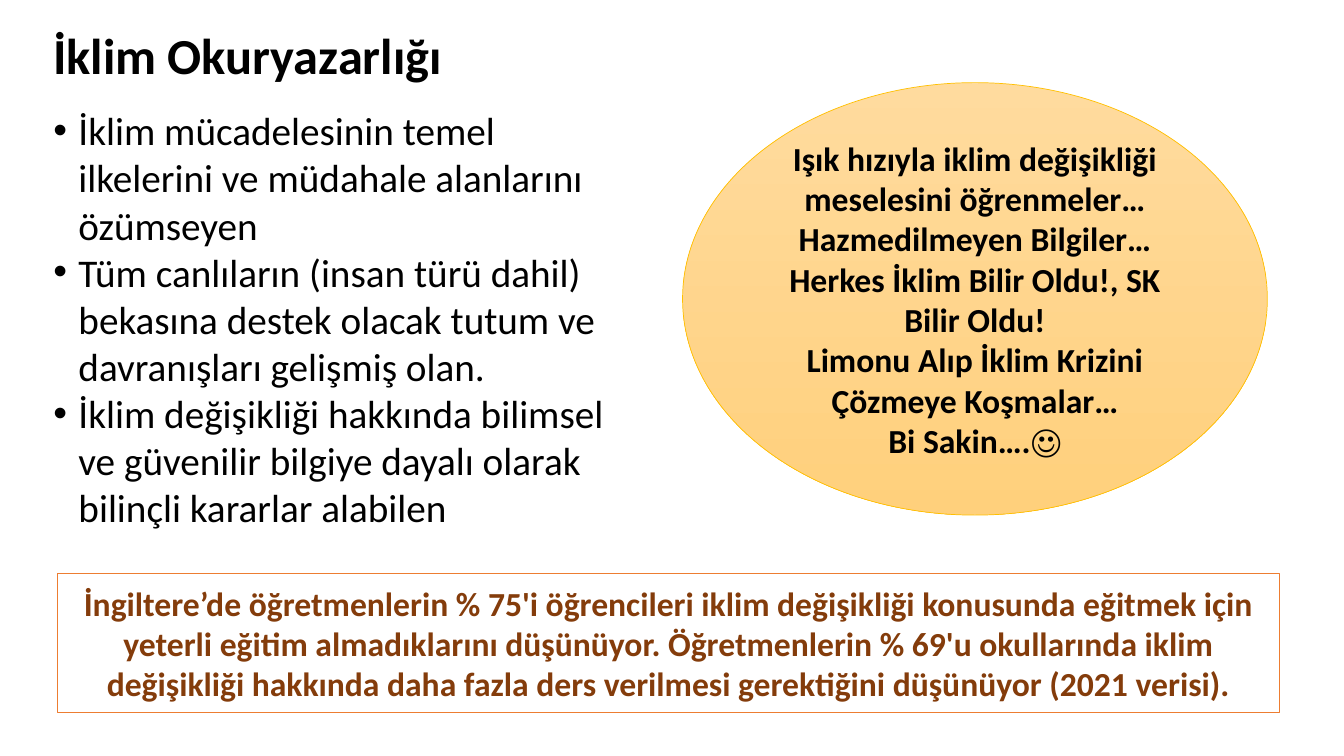
from lxml import etree
from pptx import Presentation
from pptx.dml.color import RGBColor
from pptx.enum import shapes, text
from pptx.oxml import ns
from pptx.util import Inches, Pt

BLACK = RGBColor(0x00, 0x00, 0x00)
WHITE = RGBColor(0xFF, 0xFF, 0xFF)
BROWN = RGBColor(0x84, 0x3C, 0x0B)
ORANGE = RGBColor(0xED, 0x7D, 0x31)
GOLD = RGBColor(0xFF, 0xC0, 0x00)
SAND_LIGHT = RGBColor(0xFF, 0xDB, 0x9E)
SAND_DARK = RGBColor(0xFF, 0xD0, 0x7C)

TITLE = "İklim Okuryazarlığı"
TRAITS = [
    "İklim mücadelesinin temel ilkelerini ve müdahale alanlarını özümseyen",
    "Tüm canlıların (insan türü dahil) bekasına destek olacak tutum ve davranışları gelişmiş olan.",
    "İklim değişikliği hakkında bilimsel ve güvenilir bilgiye dayalı olarak bilinçli kararlar alabilen",
]
REMARKS = "\n".join([
    "Işık hızıyla iklim değişikliği meselesini öğrenmeler…",
    "Hazmedilmeyen Bilgiler…",
    "Herkes İklim Bilir Oldu!, SK Bilir Oldu!",
    "Limonu Alıp İklim Krizini Çözmeye Koşmalar…",
    "Bi Sakin….☺",
])
SURVEY = (
    "İngiltere’de öğretmenlerin % 75'i öğrencileri iklim değişikliği konusunda "
    "eğitmek için yeterli eğitim almadıklarını düşünüyor. Öğretmenlerin % 69'u "
    "okullarında iklim değişikliği hakkında daha fazla ders verilmesi gerektiğini "
    "düşünüyor (2021 verisi)."
)


def write(shape, paragraphs, size, color=BLACK, bold=False,
          align=text.PP_ALIGN.LEFT, anchor=text.MSO_ANCHOR.MIDDLE):
    frame = shape.text_frame
    frame.word_wrap = True
    frame.vertical_anchor = anchor
    for index, words in enumerate(paragraphs):
        para = frame.add_paragraph() if index else frame.paragraphs[0]
        para.text = words
        para.alignment = align
        for span in para.runs:
            for name, value in {"name": "Calibri", "size": Pt(size), "bold": bold}.items():
                setattr(span.font, name, value)
            span.font.color.rgb = color


def add_text(page, bounds, paragraphs, size, **style):
    box = page.shapes.add_textbox(*map(Inches, bounds))
    write(box, paragraphs, size, **style)
    return box


def add_bullets(box, indent):
    for para in box.text_frame.paragraphs:
        properties = para._p.get_or_add_pPr()
        properties.set("marL", str(Inches(indent)))
        properties.set("indent", str(-Inches(indent)))
        font = etree.SubElement(properties, ns.qn("a:buFont"))
        font.set("typeface", "Arial")
        bullet = etree.SubElement(properties, ns.qn("a:buChar"))
        bullet.set("char", "•")


def add_callout(page, kind, bounds, words, line, width, color):
    callout = page.shapes.add_shape(kind, *map(Inches, bounds))
    callout.shadow.inherit = False
    callout.line.color.rgb = line
    callout.line.width = Pt(width)
    write(callout, [words], 24, color=color, bold=True, align=text.PP_ALIGN.CENTER)
    return callout


def main():
    deck = Presentation()
    deck.slide_width, deck.slide_height = Inches(13.33), Inches(7.5)
    page = deck.slides.add_slide(deck.slide_layouts[6])

    add_text(page, (0.43, 0.19, 12.68, 0.7), [TITLE], 36, bold=True)
    traits = add_text(page, (0.43, 1.01, 5.89, 4.5), TRAITS, 28,
                      anchor=text.MSO_ANCHOR.TOP)
    add_bullets(traits, 0.25)

    remarks = add_callout(page, shapes.MSO_SHAPE.OVAL, (6.77, 0.82, 5.8, 4.29),
                          REMARKS, GOLD, 0.5, BLACK)
    remarks.fill.gradient()
    remarks.fill.gradient_angle = 270
    for stop, color in zip(remarks.fill.gradient_stops, (SAND_LIGHT, SAND_DARK)):
        stop.color.rgb = color

    survey = add_callout(page, shapes.MSO_SHAPE.RECTANGLE, (0.57, 5.69, 12.12, 1.38),
                         SURVEY, ORANGE, 1, BROWN)
    survey.fill.solid()
    survey.fill.fore_color.rgb = WHITE

    deck.save("out.pptx")


if __name__ == "__main__":
    main()
